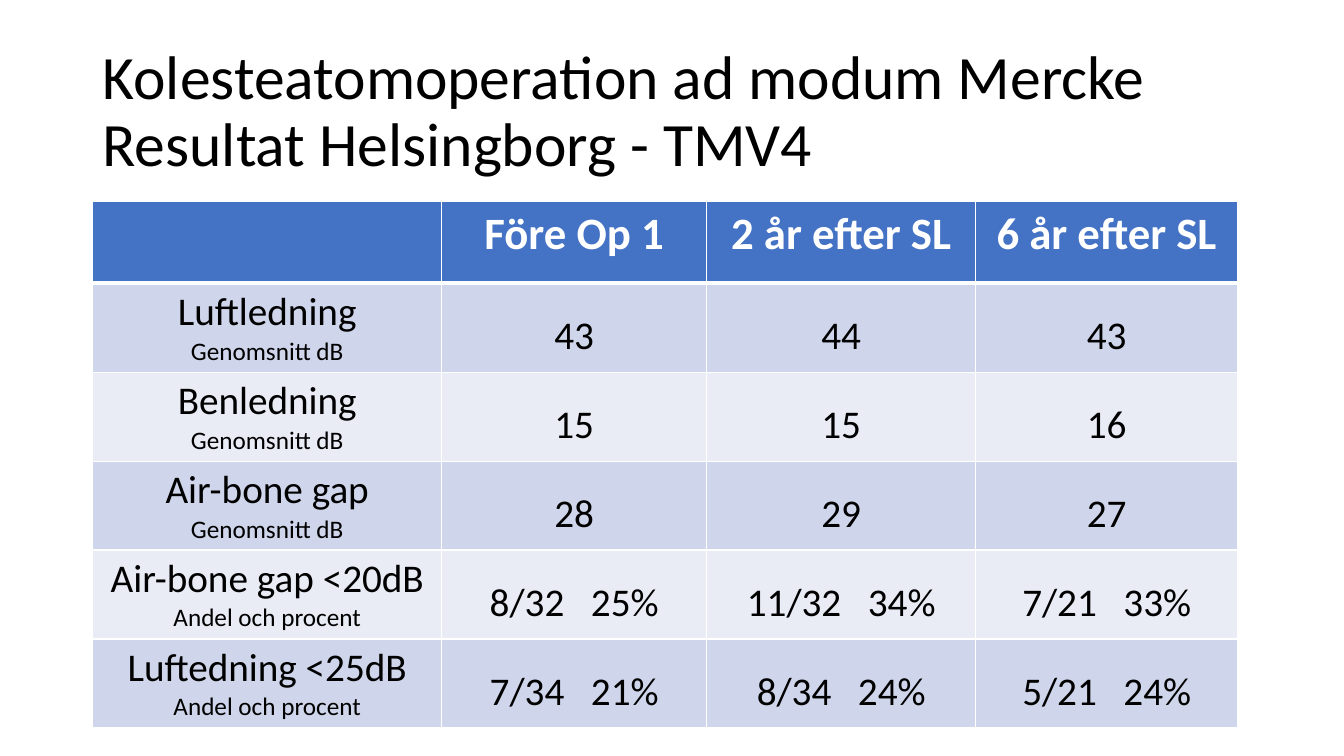
from dataclasses import dataclass

from lxml.etree import SubElement
from pptx import Presentation
from pptx.dml.color import RGBColor as Rgb
from pptx.enum.text import MSO_ANCHOR as Anchor, MSO_AUTO_SIZE as AutoSize, PP_ALIGN as Align
from pptx.oxml.ns import qn
from pptx.util import Cm, Pt

TITLE = "Kolesteatomoperation ad modum Mercke\vResultat Helsingborg - TMV4"
HEADINGS = ["", "Före Op 1", "2 år efter SL", "6 år efter SL"]
MEAN, SHARE = "Genomsnitt dB", "Andel och procent"
RESULTS = [
    ("Luftledning", MEAN, ["43", "44", "43"]),
    ("Benledning", MEAN, ["15", "15", "16"]),
    ("Air-bone gap", MEAN, ["28", "29", "27"]),
    ("Air-bone gap <20dB", SHARE, ["8/32   25%", "11/32   34%", "7/21   33%"]),
    ("Luftedning <25dB", SHARE, ["7/34   21%", "8/34   24%", "5/21   24%"]),
]

SLIDE_SIZE = Cm(33.87), Cm(19.05)
TITLE_BOX = {"left": Cm(2.33), "top": Cm(1.01), "width": Cm(29.21), "height": Cm(3.68)}
TABLE_LEFT, TABLE_TOP = Cm(2.34), Cm(5.08)
COLUMN_WIDTHS = [Cm(8.79), Cm(6.68), Cm(6.78), Cm(6.6)]
ROW_HEIGHTS = [Cm(2.06)] + [Cm(2.24)] * len(RESULTS)


@dataclass(frozen=True)
class Theme:
    font: str = "Calibri"
    ink: str = "000000"
    white: str = "FFFFFF"
    header: str = "4472C4"
    bands: tuple = ("CFD5EA", "E9EBF5")
    title_size: int = 44
    header_size: int = 32
    body_size: int = 28
    note_size: int = 18
    rule: int = 1
    header_rule: int = 3


THEME = Theme()


def format_para(para, size, color, bold=False, **layout):
    for name, value in layout.items():
        setattr(para, name, value)
    font_format = {"name": THEME.font, "size": Pt(size), "bold": bold}
    for name, value in font_format.items():
        setattr(para.font, name, value)
    para.font.color.rgb = Rgb.from_string(color)


def draw_borders(cell, bottom):
    """Give the cell white rules, with its own weight below; call before the fill."""
    properties = cell._tc.get_or_add_tcPr()
    weights = {"L": THEME.rule, "R": THEME.rule, "T": THEME.rule, "B": bottom}
    for side, weight in weights.items():
        line = SubElement(properties, qn(f"a:ln{side}"), w=str(Pt(weight)))
        SubElement(SubElement(line, qn("a:solidFill")), qn("a:srgbClr"), val=THEME.white)


def fill_cell(cell, lines, sizes, fill, color, bottom=THEME.rule, bold=False, spacing=1.0):
    draw_borders(cell, bottom)
    cell.fill.solid()
    cell.fill.fore_color.rgb = Rgb.from_string(fill)
    cell.text = "\n".join(lines)
    for para, size in zip(cell.text_frame.paragraphs, sizes):
        format_para(para, size, color, bold, alignment=Align.CENTER, line_spacing=spacing)


def add_title(page):
    title = page.shapes.title
    for name, value in TITLE_BOX.items():
        setattr(title, name, value)
    frame = title.text_frame
    frame.text = TITLE
    frame_format = {"auto_size": AutoSize.NONE, "vertical_anchor": Anchor.MIDDLE, "word_wrap": True}
    for name, value in frame_format.items():
        setattr(frame, name, value)
    format_para(frame.paragraphs[0], THEME.title_size, THEME.ink,
                alignment=Align.LEFT, line_spacing=0.9)


def add_results(page):
    table = page.shapes.add_table(len(ROW_HEIGHTS), len(COLUMN_WIDTHS), TABLE_LEFT, TABLE_TOP,
                                  sum(COLUMN_WIDTHS), sum(ROW_HEIGHTS)).table
    for column, width in zip(table.columns, COLUMN_WIDTHS):
        column.width = width
    for row, height in zip(table.rows, ROW_HEIGHTS):
        row.height = height

    for index, heading in enumerate(HEADINGS):
        fill_cell(table.cell(0, index), [heading], [THEME.header_size], THEME.header,
                  THEME.white, bottom=THEME.header_rule, bold=True)
    for number, (measure, unit, values) in enumerate(RESULTS):
        band = THEME.bands[number % len(THEME.bands)]
        fill_cell(table.cell(number + 1, 0), [measure, unit],
                  [THEME.body_size, THEME.note_size], band, THEME.ink)
        for index, value in enumerate(values, start=1):
            fill_cell(table.cell(number + 1, index), [value], [THEME.body_size], band,
                      THEME.ink, spacing=1.5)


def main():
    deck = Presentation()
    deck.slide_width, deck.slide_height = SLIDE_SIZE
    page = deck.slides.add_slide(deck.slide_layouts.get_by_name("Title Only"))
    add_title(page)
    add_results(page)
    deck.save("out.pptx")


if __name__ == "__main__":
    main()
